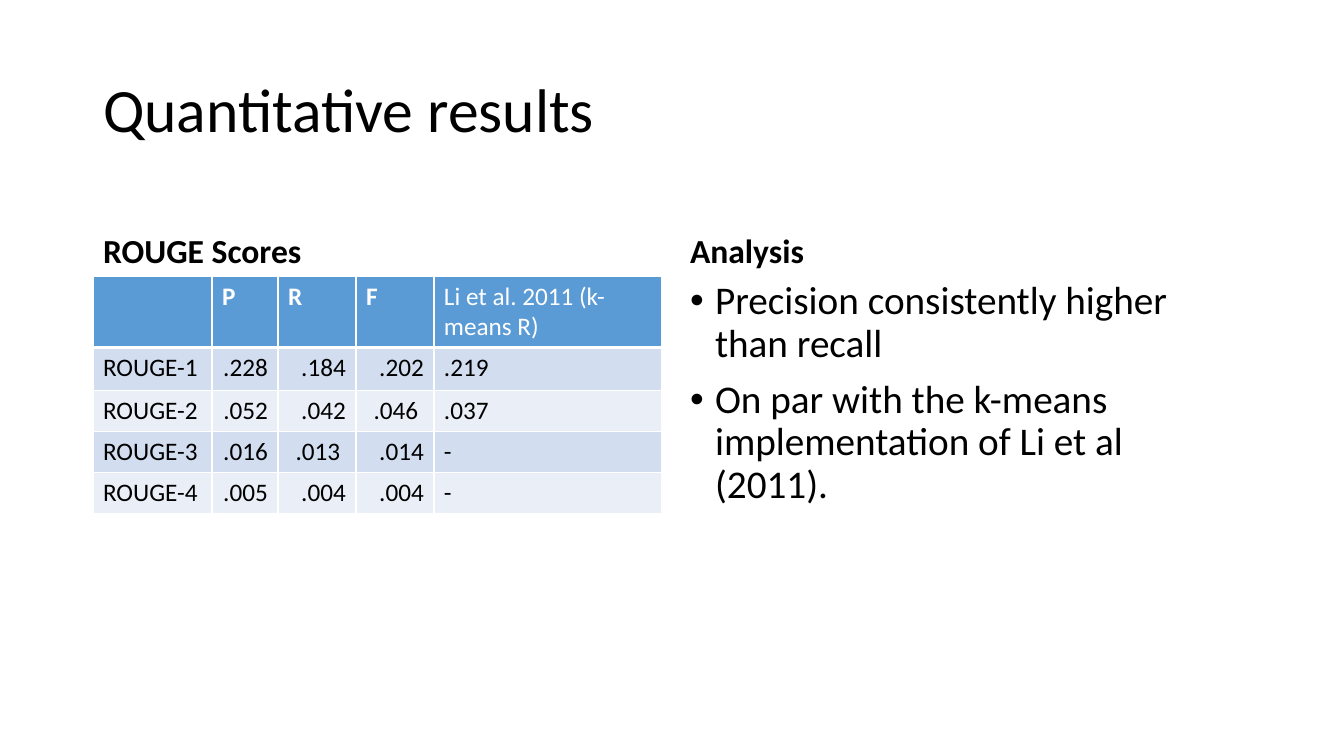
from dataclasses import dataclass

from lxml.etree import SubElement
from pptx import Presentation
from pptx.dml.color import RGBColor
from pptx.enum.text import MSO_ANCHOR as Anchor, MSO_AUTO_SIZE as AutoSize, PP_ALIGN as Align
from pptx.oxml.ns import qn
from pptx.slide import Slide
from pptx.table import _Cell as Cell
from pptx.text.text import _Paragraph as Paragraph
from pptx.util import Emu, Pt

SLIDE_WIDTH, SLIDE_HEIGHT = 1344, 756
EMU_PER_INCH, PX_PER_INCH = 914400, 100.8
FONT = "Calibri"
BLACK = RGBColor(0x00, 0x00, 0x00)
WHITE = RGBColor(0xFF, 0xFF, 0xFF)
HEADER_BLUE = RGBColor(0x5B, 0x9B, 0xD5)
BAND_DARK = RGBColor(0xD2, 0xDE, 0xEF)
BAND_LIGHT = RGBColor(0xEA, 0xEF, 0xF7)

LEFT, RIGHT = 93, 680
HEADING_TOP, HEADING_HEIGHT = 185, 91
CONTENT_TOP = HEADING_TOP + HEADING_HEIGHT
LEFT_WIDTH, RIGHT_WIDTH = 569, 572
BULLET_INDENT = 25
COMPARISON_LAYOUT, LEFT_CONTENT = 4, 2

COLUMN_WIDTHS = (119, 66, 78, 78, 228)
ROW_HEIGHTS = (71, 43, 41, 41, 41)
NUMBER_COLUMNS = (1, 2, 3)
SCORES = (
    ("", "P", "R", "F", "Li et al. 2011 (k-means R)"),
    ("ROUGE-1", ".228", ".184", ".202", ".219"),
    ("ROUGE-2", ".052 ", ".042", ".046 ", ".037"),
    ("ROUGE-3", ".016", ".013 ", ".014", "-"),
    ("ROUGE-4", ".005", ".004", ".004", "-"),
)


@dataclass(frozen=True)
class TextBlock:
    placeholder: int
    box: tuple[int, int, int, int]
    lines: tuple[str, ...]
    size: int
    anchor: Anchor
    bold: bool = False
    bulleted: bool = False
    space_before: int = 10


TEXT_BLOCKS = (
    TextBlock(0, (LEFT, 40, 1159, 146), ("Quantitative results",), 44, Anchor.MIDDLE, space_before=0),
    TextBlock(1, (LEFT, HEADING_TOP, LEFT_WIDTH, HEADING_HEIGHT), ("ROUGE Scores",), 24, Anchor.BOTTOM, bold=True),
    TextBlock(3, (RIGHT, HEADING_TOP, RIGHT_WIDTH, HEADING_HEIGHT), ("Analysis",), 24, Anchor.BOTTOM, bold=True),
    TextBlock(
        4,
        (RIGHT, CONTENT_TOP, RIGHT_WIDTH, 406),
        (
            "Precision consistently higher than recall",
            "On par with the k-means implementation of Li et al (2011).",
        ),
        28,
        Anchor.TOP,
        bulleted=True,
    ),
)


def px(length: int) -> Emu:
    return Emu(round(length * EMU_PER_INCH / PX_PER_INCH))


def add_span(para: Paragraph, text: str, size: int, color: RGBColor, bold: bool) -> None:
    span = para.add_run()
    span.text = text
    span.font.name = FONT
    span.font.size = Pt(size)
    span.font.bold = bold
    span.font.color.rgb = color


def set_bullet(para: Paragraph, bulleted: bool) -> None:
    properties = para._p.get_or_add_pPr()
    indent = px(BULLET_INDENT) if bulleted else 0
    properties.set("marL", str(indent))
    properties.set("indent", str(-indent))
    if bulleted:
        SubElement(properties, qn("a:buFont"), typeface="Arial")
        SubElement(properties, qn("a:buChar"), char="•")
    else:
        SubElement(properties, qn("a:buNone"))


def fill_placeholder(page: Slide, block: TextBlock) -> None:
    shape = page.placeholders[block.placeholder]
    shape.left, shape.top, shape.width, shape.height = map(px, block.box)
    frame = shape.text_frame
    frame.word_wrap = True
    frame.auto_size = AutoSize.NONE
    frame.vertical_anchor = block.anchor
    for index, line in enumerate(block.lines):
        para = frame.add_paragraph() if index else frame.paragraphs[0]
        para.alignment = Align.LEFT
        para.line_spacing = 0.9
        para.space_before = Pt(block.space_before)
        set_bullet(para, block.bulleted)
        add_span(para, line, block.size, BLACK, block.bold)


def set_borders(cell: Cell, top: int, bottom: int) -> None:
    properties = cell._tc.get_or_add_tcPr()
    for side, width in (("L", 1), ("R", 1), ("T", top), ("B", bottom)):
        line = SubElement(properties, qn(f"a:ln{side}"), w=str(Pt(width)))
        fill = SubElement(line, qn("a:solidFill"))
        SubElement(fill, qn("a:srgbClr"), val=str(WHITE))


def fill_cell(cell: Cell, row: int, column: int) -> None:
    header = row == 0
    set_borders(cell, top=3 if row == 1 else 1, bottom=3 if header else 1)
    cell.fill.solid()
    cell.fill.fore_color.rgb = HEADER_BLUE if header else (BAND_LIGHT, BAND_DARK)[row % 2]
    para = cell.text_frame.paragraphs[0]
    para.alignment = Align.RIGHT if not header and column in NUMBER_COLUMNS else Align.LEFT
    text = SCORES[row][column]
    if text:
        add_span(para, text, 18, WHITE if header else BLACK, header and column in NUMBER_COLUMNS)


def add_score_table(page: Slide) -> None:
    box = (LEFT, CONTENT_TOP, sum(COLUMN_WIDTHS), sum(ROW_HEIGHTS))
    table = page.shapes.add_table(len(ROW_HEIGHTS), len(COLUMN_WIDTHS), *map(px, box)).table
    for column, width in zip(table.columns, COLUMN_WIDTHS):
        column.width = px(width)
    for row, height in zip(table.rows, ROW_HEIGHTS):
        row.height = px(height)
    for row in range(len(ROW_HEIGHTS)):
        for column in range(len(COLUMN_WIDTHS)):
            fill_cell(table.cell(row, column), row, column)


def main() -> None:
    deck = Presentation()
    deck.slide_width, deck.slide_height = px(SLIDE_WIDTH), px(SLIDE_HEIGHT)
    page = deck.slides.add_slide(deck.slide_layouts[COMPARISON_LAYOUT])
    for block in TEXT_BLOCKS:
        fill_placeholder(page, block)
    unused = page.placeholders[LEFT_CONTENT].element
    unused.getparent().remove(unused)
    add_score_table(page)
    deck.save("out.pptx")


if __name__ == "__main__":
    main()
